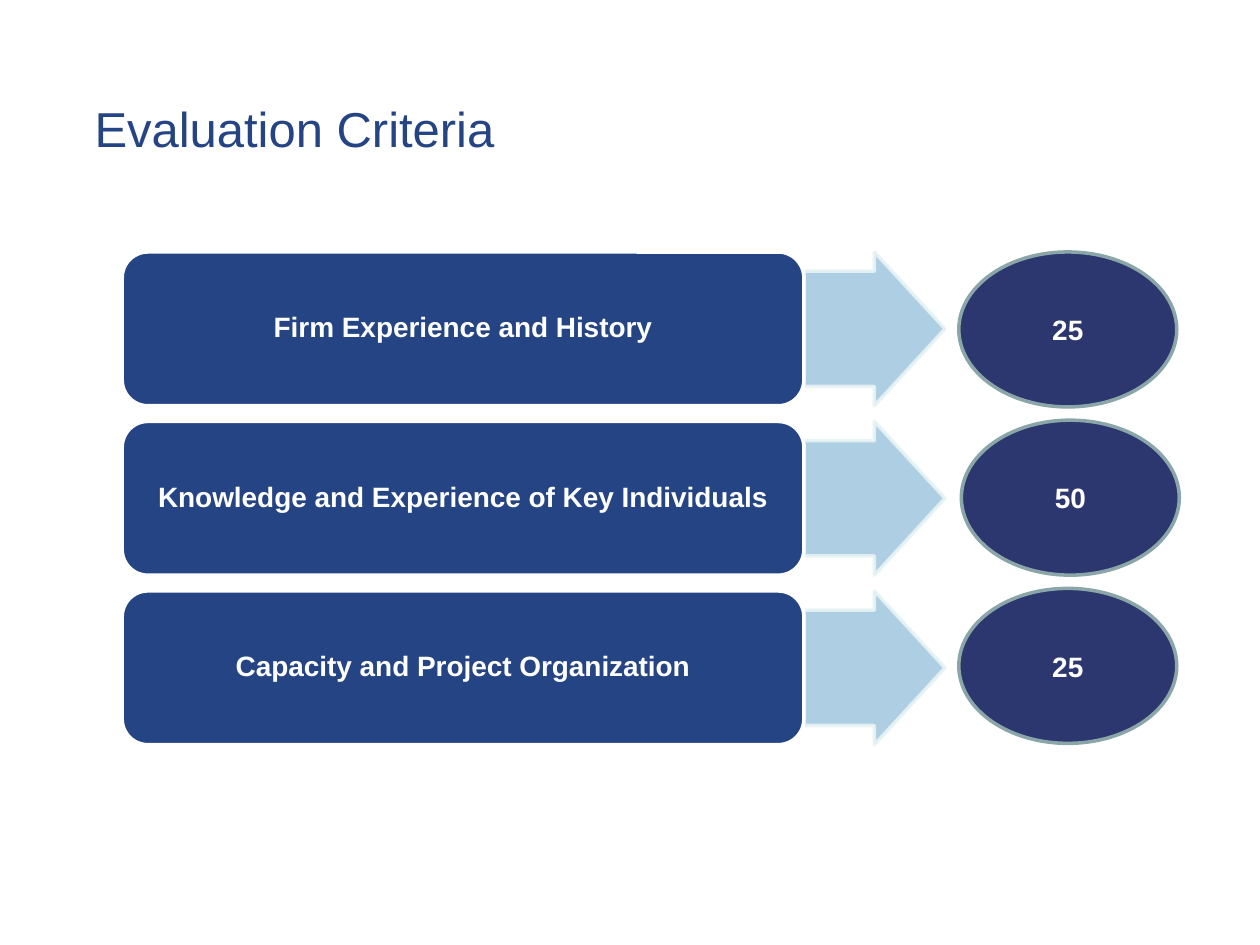
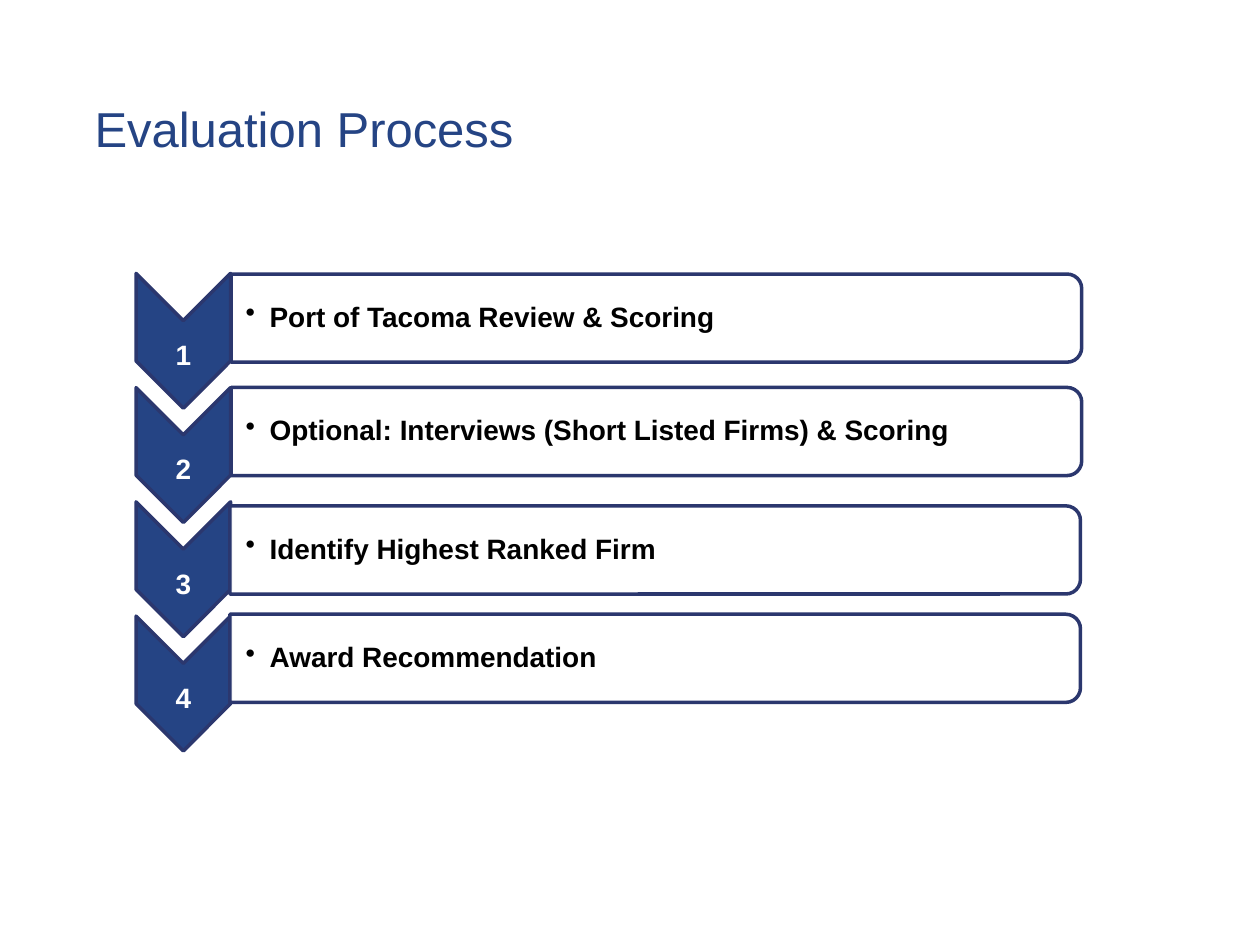
import pptx
import pptx.util
import pptx.dml.color
import pptx.enum.shapes
import pptx.enum.text
import pptx.oxml.ns
from lxml import etree

Inches = pptx.util.Inches
Pt = pptx.util.Pt
SHAPE = pptx.enum.shapes.MSO_SHAPE
ALIGN = pptx.enum.text.PP_ALIGN
ANCHOR = pptx.enum.text.MSO_ANCHOR
qn = pptx.oxml.ns.qn

BLUE, NAVY, WHITE, BLACK = "254484", "2B376E", "FFFFFF", "000000"
ARROW_BLUE, ARROW_EDGE, OVAL_EDGE = "A6CAE1", "E7F3F4", "8AA6A8"


def color(value):
    return pptx.dml.color.RGBColor.from_string(value)


def spread(first, last, count):
    return [first + (last - first) * i / (count - 1) for i in range(count)]


def apply_format(target, values):
    for name, value in values.items():
        setattr(target, name, value)


class Deck:
    label_format = {"name": "Arial", "size": Pt(16), "bold": True}
    title_format = {"name": "Arial", "size": Pt(28), "bold": False}

    def __init__(self):
        self.deck = pptx.Presentation()
        apply_format(self.deck, {"slide_width": Inches(10), "slide_height": Inches(7.5)})
        self.page = None

    def add_page(self, title):
        self.page = self.deck.slides.add_slide(self.deck.slide_layouts[6])
        self.label(title, (0.75, 0, 6.75, 1.25), BLUE, anchor=ANCHOR.BOTTOM,
                   align=ALIGN.LEFT, spacing=Pt(28), font=self.title_format)

    def fill_text(self, box, text, ink, insets=(0.1, 0.05, 0.1, 0.05),
                  anchor=ANCHOR.MIDDLE, align=ALIGN.CENTER, spacing=1.0,
                  font=None, bullet=False):
        frame = box.text_frame
        margins = ("margin_left", "margin_top", "margin_right", "margin_bottom")
        apply_format(frame, {"word_wrap": True, "vertical_anchor": anchor})
        apply_format(frame, dict(zip(margins, map(Inches, insets))))
        para = frame.paragraphs[0]
        if bullet:
            properties = para._p.get_or_add_pPr()
            properties.set("marL", str(Inches(0.19)))
            properties.set("indent", str(Inches(-0.19)))
            etree.SubElement(properties, qn("a:buChar")).set("char", "•")
        apply_format(para, {"alignment": align, "line_spacing": spacing})
        span = para.add_run()
        span.text = text
        apply_format(span.font, font or self.label_format)
        span.font.color.rgb = color(ink)

    def label(self, text, place, ink, insets=(0, 0, 0, 0), **layout):
        box = self.page.shapes.add_textbox(*map(Inches, place))
        self.fill_text(box, text, ink, insets, **layout)

    def shape(self, kind, place, fill, line, rotation=0, adjustments=()):
        box = self.page.shapes.add_shape(kind, *map(Inches, place))
        box.shadow.inherit = False
        box.rotation = rotation
        for index, value in enumerate(adjustments):
            box.adjustments[index] = value
        box.fill.solid()
        box.fill.fore_color.rgb = color(fill)
        box.line.color.rgb = color(line)
        box.line.width = Pt(2)
        return box

    def soften(self, box, with_line=False):
        parts = [box.element.spPr]
        if with_line:
            parts.append(box.element.spPr.find(qn("a:ln")))
        for part in parts:
            shade = part.find(qn("a:solidFill")).find(qn("a:srgbClr"))
            etree.SubElement(shade, qn("a:alpha")).set("val", "90000")

    def criterion(self, name, top):
        arrow = self.shape(SHAPE.RIGHT_ARROW, (6.38, top, 1.12, 1.22),
                           ARROW_BLUE, ARROW_EDGE, adjustments=(0.75, 0.5))
        self.soften(arrow, with_line=True)
        self.shape(SHAPE.ROUNDED_RECTANGLE, (0.97, top, 5.41, 1.22), BLUE, WHITE)
        self.label(name, (1.03, top + 0.06, 5.29, 1.1), WHITE,
                   (0.07, 0.03, 0.07, 0.03), spacing=0.9)

    def score(self, points, left, top):
        oval = self.shape(SHAPE.OVAL, (left, top, 1.73, 1.23), NAVY, OVAL_EDGE)
        self.fill_text(oval, points, WHITE)

    def step(self, number, name, chevron_top, bar_left, bar_top):
        self.shape(SHAPE.CHEVRON, (0.92, chevron_top, 1.07, 0.75), BLUE, NAVY, 90)
        self.label(str(number), (1.08, chevron_top + 0.22, 0.75, 0.32), WHITE,
                   (0.01, 0.25, 0.01, 0.01), spacing=0.9)
        bar = self.shape(SHAPE.ROUND_2_SAME_RECTANGLE, (bar_left, bar_top, 0.7, 6.75),
                         WHITE, NAVY, 90)
        self.soften(bar)
        self.label(name, (1.83, bar_top + 3.06, 6.72, 0.63), BLACK,
                   (0.12, 0.01, 0.01, 0.01), align=ALIGN.LEFT, spacing=0.9, bullet=True)


def main():
    slides = Deck()

    slides.add_page("Evaluation Criteria")
    criteria = ["Firm Experience and History",
                "Knowledge and Experience of Key Individuals",
                "Capacity and Project Organization"]
    for name, top in zip(criteria, spread(2, 4.69, 3)):
        slides.criterion(name, top)
    scores = [("25", 7.61), ("50", 7.63), ("25", 7.61)]
    for (points, left), top in zip(scores, spread(2, 4.67, 3)):
        slides.score(points, left, top)

    slides.add_page("Evaluation Process")
    steps = [("Port of Tacoma Review & Scoring", 4.86, -0.85),
             ("Optional: Interviews (Short Listed Firms) & Scoring", 4.86, 0.05),
             ("Identify Highest Ranked Firm", 4.85, 0.99),
             ("Award Recommendation", 4.85, 1.85)]
    chevron_tops = spread(2.33, 5.05, len(steps))
    for number, (step, chevron_top) in enumerate(zip(steps, chevron_tops), 1):
        name, bar_left, bar_top = step
        slides.step(number, name, chevron_top, bar_left, bar_top)

    slides.deck.save("out.pptx")


if __name__ == "__main__":
    main()
